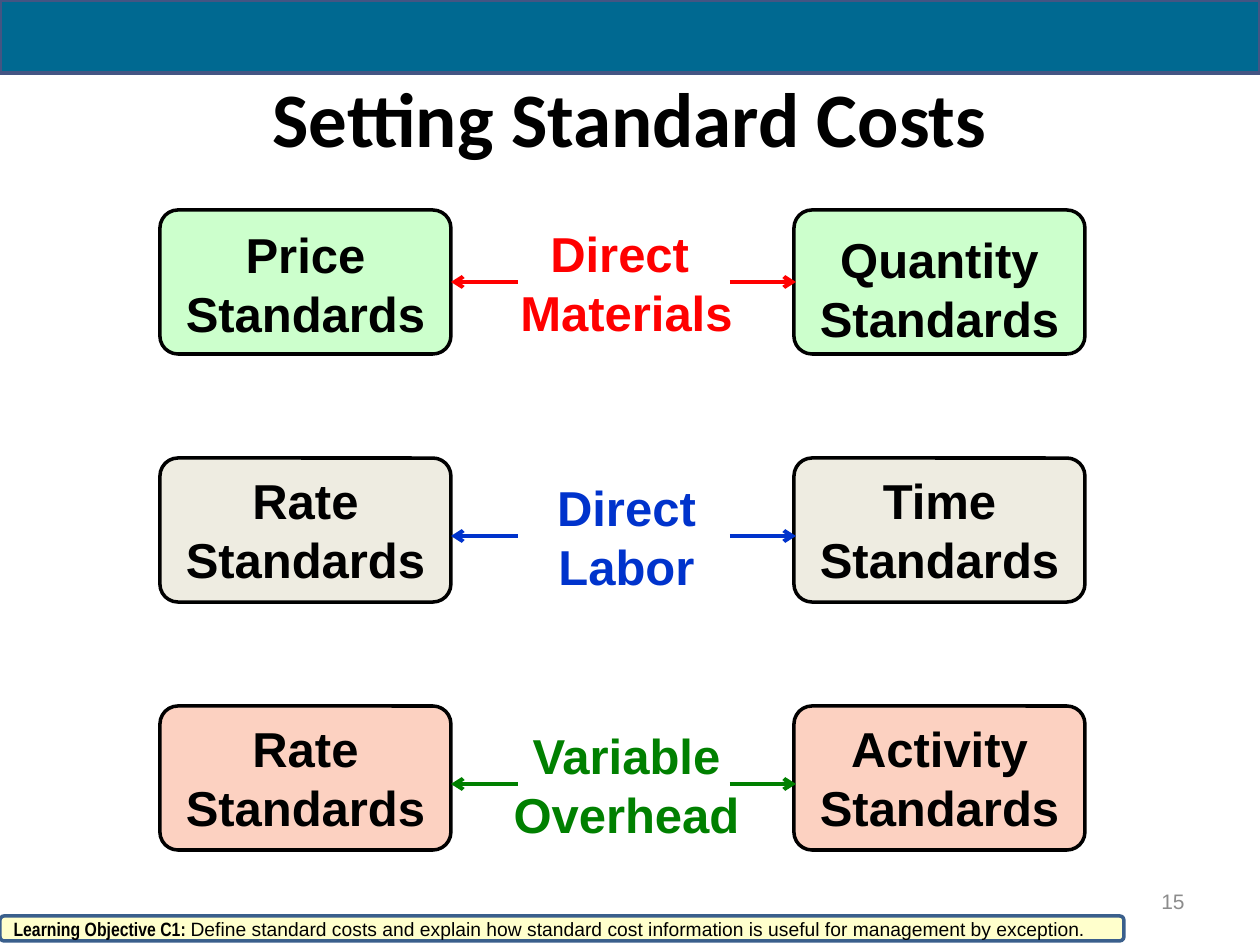
from lxml import etree
from pptx import Presentation
from pptx.dml.color import RGBColor
from pptx.enum.shapes import MSO_CONNECTOR, MSO_SHAPE
from pptx.enum.text import MSO_ANCHOR, PP_ALIGN
from pptx.oxml.ns import qn
from pptx.util import Pt

PX = 914400 / 126
RECT, ROUND = MSO_SHAPE.RECTANGLE, MSO_SHAPE.ROUNDED_RECTANGLE
LEFT, CENTER, RIGHT = PP_ALIGN.LEFT, PP_ALIGN.CENTER, PP_ALIGN.RIGHT
TOP, MIDDLE = MSO_ANCHOR.TOP, MSO_ANCHOR.MIDDLE
STRAIGHT = MSO_CONNECTOR.STRAIGHT

ROWS = [
    ("CCFFCC", "FF0000", 72, ("Price", "Standards", 8),
     ("Direct ", "Materials", 7), ("Quantity", "Standards", 13)),
    ("EEECE1", "0033CC", 78, ("Rate", "Standards", 6),
     ("Direct", "Labor", 13), ("Time", "Standards", 6)),
    ("FCD1C1", "008000", 78, ("Rate", "Standards", 6),
     ("Variable", "Overhead", 13), ("Activity", "Standards", 6)),
]


def emu(*lengths):
    return [round(n * PX) for n in lengths]


def rgb(color):
    return RGBColor.from_string(color)


def add_run(p, text, size, color, font="Arial", bold=False):
    r = p.add_run()
    r.text = text
    r.font.name = font
    r.font.size = Pt(size)
    r.font.bold = bold
    r.font.color.rgb = rgb(color)


def set_frame(sp, align, anchor, wrap=True):
    tf = sp.text_frame
    tf.word_wrap = wrap
    tf.vertical_anchor = anchor
    p = tf.paragraphs[0]
    p.alignment = align
    return p


def add_box(shapes, kind, box, fill, line, width):
    sp = shapes.add_shape(kind, *emu(*box))
    sp.shadow.inherit = False
    sp.fill.solid()
    sp.fill.fore_color.rgb = rgb(fill)
    sp.line.color.rgb = rgb(line)
    sp.line.width = Pt(width)
    return sp


def add_label(shapes, box, lines, color):
    p = set_frame(shapes.add_textbox(*emu(*box)), CENTER, TOP, False)
    first, second = lines
    add_run(p, first, 28, color, bold=True)
    p.add_line_break()
    add_run(p, second, 28, color, bold=True)


def add_arrow(shapes, x1, x2, y, color):
    cxn = shapes.add_connector(STRAIGHT, *emu(x1, y, x2, y))
    cxn.line.color.rgb = rgb(color)
    cxn.line.width = Pt(2.25)
    etree.SubElement(cxn.line._get_or_add_ln(), qn("a:tailEnd"), type="arrow")
    etree.SubElement(cxn._element.spPr, qn("a:effectLst"))


def add_row(s, box, fill, color, arrow_y, left, middle, right):
    x, y, w, h = box
    box_w, label_h = 291, 131
    shapes = s.shapes.add_group_shape().shapes
    for bx, (*lines, dy) in ((x, left), (x + w - box_w, right)):
        sp = add_box(shapes, ROUND, (bx, y, box_w, h), fill, "000000", 2)
        sp.adjustments[0] = 0.125
        add_label(shapes, (bx, y + dy, box_w, label_h), lines, "000000")
    *lines, dy = middle
    add_label(shapes, (x + 339, y + dy, 255, label_h), lines, color)
    for start, end in ((570, 636), (358, 291)):
        add_arrow(shapes, x + start, x + end, y + arrow_y, color)


def add_title(s, box, text):
    sp = s.shapes.title
    sp.left, sp.top, sp.width, sp.height = emu(*box)
    add_run(set_frame(sp, CENTER, MIDDLE), text, 44, "000000", "Calibri", True)


def add_page_number(s, box, text):
    sp = s.shapes.add_textbox(*emu(*box))
    add_run(set_frame(sp, RIGHT, MIDDLE), text, 12, "8C8C8C")


def add_objective(s, box, name, text):
    sp = add_box(s.shapes, ROUND, box, "FFFFCC", "3A5F8C", 2)
    p = set_frame(sp, LEFT, MIDDLE)
    add_run(p, name, 11, "000000", "Arial Narrow", True)
    add_run(p, text, 11, "000000")


def main():
    prs = Presentation()
    prs.slide_width, prs.slide_height = emu(1260, 945)
    s = prs.slides.add_slide(prs.slide_layouts[5])
    add_box(s.shapes, RECT, (0, 0, 1260, 73), "006991", "445583", 2.25)
    add_title(s, (42, 38, 1176, 158), "Setting Standard Costs")
    for i, row in enumerate(ROWS):
        add_row(s, (160, 210 + 248 * i, 925, 144), *row)
    add_page_number(s, (903, 876, 294, 50), "15")
    add_objective(s, (0, 916, 1124, 25), "Learning Objective C1: ",
                  "Define standard costs and explain how standard cost "
                  "information is useful for management by exception.")
    prs.save("out.pptx")


if __name__ == "__main__":
    main()
